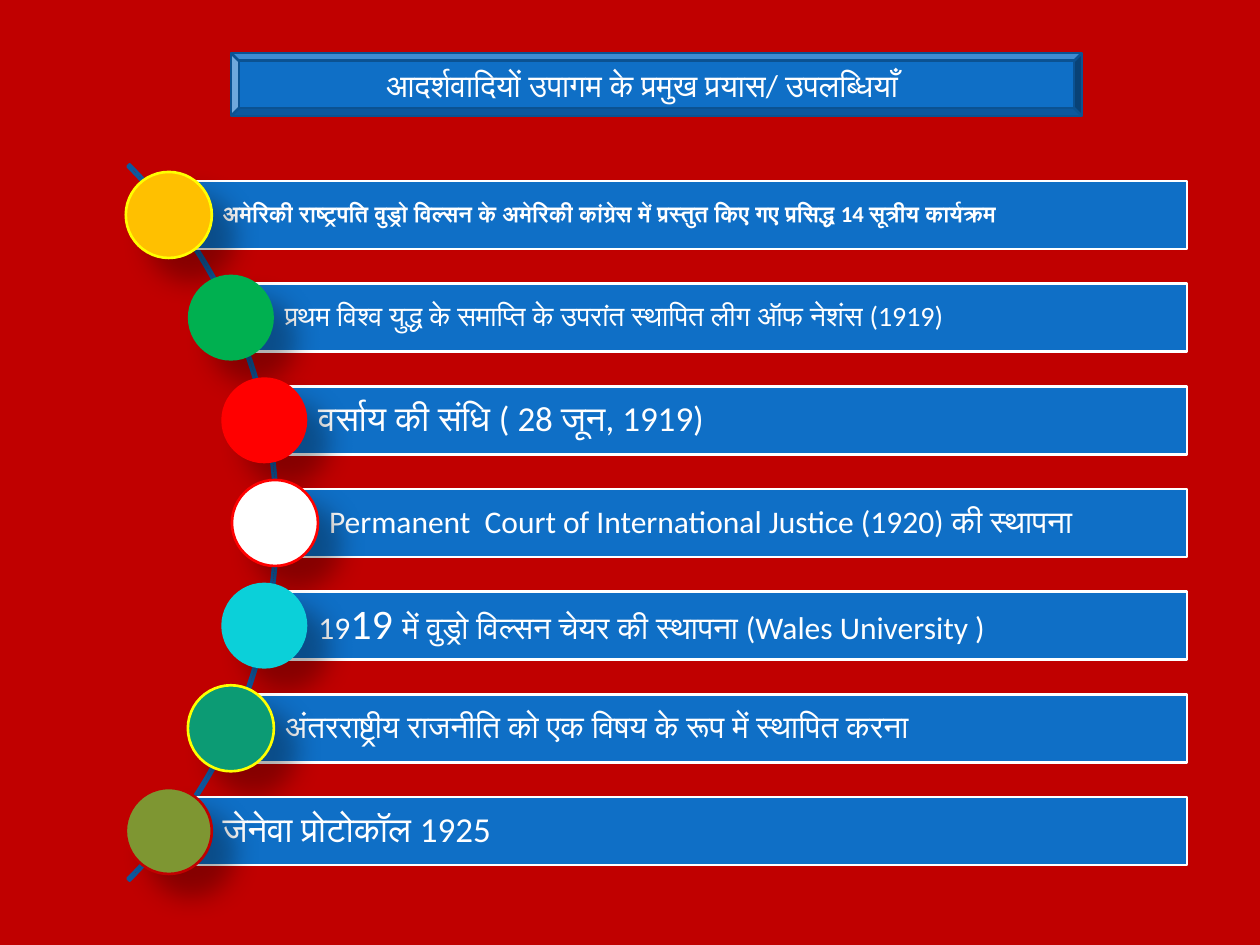
from dataclasses import dataclass
from math import sqrt
from typing import Optional

from lxml.etree import SubElement
from pptx import Presentation
from pptx.dml.color import RGBColor
from pptx.enum.shapes import MSO_SHAPE
from pptx.enum.text import MSO_ANCHOR, PP_ALIGN
from pptx.oxml.ns import qn
from pptx.util import Emu, Pt

PX = 914400 / 126
COLORS = {
    "background": "C00000", "bar": "0F6FC6", "arc": "0C599F", "frame": "0B5292",
    "white": "FFFFFF", "black": "000000", "amber": "FFC000", "yellow": "FFFF00",
    "green": "00B050", "red": "FF0000", "cyan": "0BD0D9", "teal": "0C9B74",
    "olive": "7E9632",
}
CENTER_Y, SPAN = 523, 616
CURVE_X, CURVE_R = -225, 500
BAR_RIGHT, BAR_H, DOT = 1187, 68, 86


@dataclass
class Item:
    runs: list[tuple[str, int]]
    dot: str
    ring: Optional[str] = None
    bold: bool = False


ITEMS = [
    Item([("अमेरिकी राष्ट्रपति वुड्रो विल्सन के अमेरिकी कांग्रेस में प्रस्तुत किए गए प्रसिद्ध 14 सूत्रीय कार्यक्रम", 13)],
         "amber", "yellow", bold=True),
    Item([("प्रथम विश्व युद्ध के समाप्ति के उपरांत स्थापित लीग ऑफ नेशंस (1919)", 16)], "green"),
    Item([("वर्साय की संधि ( 28 जून, 1919)", 20)], "red"),
    Item([("Permanent  Court of International Justice (1920) की स्थापना", 18)], "white", "red"),
    Item([("19", 18), ("19 ", 24), ("में वुड्रो विल्सन चेयर की स्थापना (Wales University )", 18)], "cyan"),
    Item([("अंतरराष्ट्रीय राजनीति को एक विषय के रूप में स्थापित करना", 18)], "teal", "yellow"),
    Item([("जेनेवा प्रोटोकॉल 1925", 20)], "olive", "background"),
]


def px(n: float) -> Emu:
    return Emu(round(n * PX))


def rgb(name: str) -> RGBColor:
    return RGBColor.from_string(COLORS[name])


def add_shape(slide, kind, x: float, y: float, w: float, h: float,
              fill: Optional[str] = None, line: Optional[str] = None):
    sp = slide.shapes.add_shape(kind, px(x), px(y), px(w), px(h))
    sp.shadow.inherit = False
    if fill:
        sp.fill.solid()
        sp.fill.fore_color.rgb = rgb(fill)
    else:
        sp.fill.background()
    if line:
        sp.line.color.rgb = rgb(line)
        sp.line.width = Pt(1.5)
    else:
        sp.line.fill.background()
    return sp


def write(sp, runs: list[tuple[str, int]], *, left: int = 12, pad: int = 6,
          indent: int = 0, spacing: float = 1.0, bold: bool = False,
          font: str = "Calibri", color: str = "white") -> None:
    tf = sp.text_frame
    tf.word_wrap = True
    tf.vertical_anchor = MSO_ANCHOR.MIDDLE
    tf.margin_left = px(left)
    tf.margin_top = tf.margin_right = tf.margin_bottom = px(pad)
    p = tf.paragraphs[0]
    p.alignment = PP_ALIGN.LEFT
    p.line_spacing = spacing
    p._p.get_or_add_pPr().set("marL", str(px(indent)))
    for text, size in runs:
        r = p.add_run()
        r.text = text
        r.font.name = font
        r.font.size = Pt(size)
        r.font.bold = bold
        r.font.color.rgb = rgb(color)


def add_shadow(sp) -> None:
    """Cast a soft shadow to the lower right."""
    effects = sp._element.spPr.find(qn("a:effectLst"))
    shadow = SubElement(effects, qn("a:outerShdw"), blurRad=str(Pt(15)),
                        dist=str(Pt(18)), dir=str(45 * 60000), rotWithShape="0")
    color = SubElement(shadow, qn("a:srgbClr"), val=COLORS["black"])
    SubElement(color, qn("a:alpha"), val="30000")


def add_item(slide, item: Item, index: int) -> None:
    dy = (index - (len(ITEMS) - 1) / 2) * SPAN / (len(ITEMS) - 1)
    x = CURVE_X + sqrt(CURVE_R ** 2 - dy ** 2)
    y = CENTER_Y + dy
    bar = add_shape(slide, MSO_SHAPE.RECTANGLE, x, y - BAR_H / 2,
                    BAR_RIGHT - x, BAR_H, "bar", "white")
    write(bar, item.runs, left=54, spacing=0.9, bold=item.bold)
    dot = add_shape(slide, MSO_SHAPE.OVAL, x - DOT / 2, y - DOT / 2,
                    DOT, DOT, item.dot, item.ring)
    add_shadow(dot)


def main() -> None:
    prs = Presentation()
    prs.slide_width, prs.slide_height = px(1260), px(945)
    slide = prs.slides.add_slide(prs.slide_layouts[6])
    slide.background.fill.solid()
    slide.background.fill.fore_color.rgb = rgb("background")

    arc = add_shape(slide, MSO_SHAPE.BLOCK_ARC, -735, 16, 1013, 1013, line="arc")
    for i, value in enumerate((189, 27, 0.003)):
        arc.adjustments[i] = value

    for i, item in enumerate(ITEMS):
        add_item(slide, item, i)

    title = add_shape(slide, MSO_SHAPE.BEVEL, 231, 53, 851, 63, "bar", "frame")
    write(title, [("आदर्शवादियों उपागम के प्रमुख प्रयास/ उपलब्धियाँ", 18)], indent=135)

    prs.save("out.pptx")


if __name__ == "__main__":
    main()
